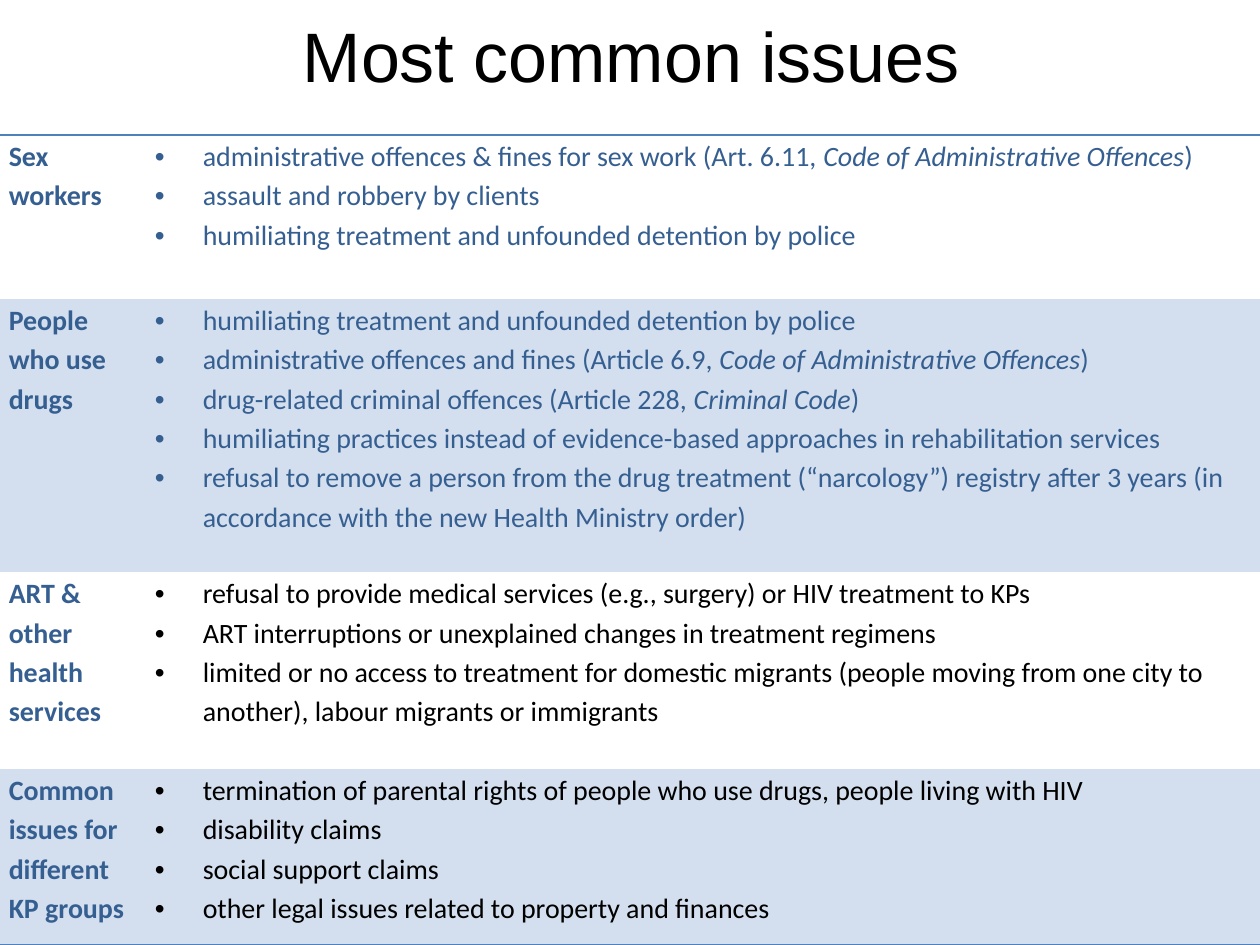
from lxml.etree import SubElement
from pptx import Presentation
from pptx.dml.color import RGBColor
from pptx.enum.text import MSO_ANCHOR, MSO_AUTO_SIZE, PP_ALIGN
from pptx.oxml import parse_xml
from pptx.oxml.ns import nsdecls, qn
from pptx.util import Inches, Pt

COLORS = {"black": "000000", "navy": "365F91", "band": "D3DFEE", "rule": "4F81BD"}
PLAIN_TABLE = "{2D5ABB26-0587-4C30-8999-92F81FD0307C}"
COLUMN_WIDTHS = [1.16, 8.96]

# Each row: height, group, text colour, space after the last issue, issues (*italic*).
ROWS = [
    (1.3, "Sex workers", "navy", 0, [
        "administrative offences & fines for sex work (Art. 6.11, "
        "*Code of Administrative Offences*)",
        "assault and robbery by clients",
        "humiliating treatment and unfounded detention by police",
    ]),
    (2.17, "People who use drugs", "navy", 6, [
        "humiliating treatment and unfounded detention by police",
        "administrative offences and fines (Article 6.9, *Code of Administrative Offences*)",
        "drug-related criminal offences (Article 228, *Criminal Code*)",
        "humiliating practices instead of evidence-based approaches in rehabilitation services",
        "refusal to remove a person from the drug treatment (“narcology”) registry "
        "after 3 years (in accordance with the new Health Ministry order)",
    ]),
    (1.56, "ART & other health services", "black", 0, [
        "refusal to provide medical services (e.g., surgery) or HIV treatment to KPs",
        "ART interruptions or unexplained changes in treatment regimens",
        "limited or no access to treatment for domestic migrants (people moving from "
        "one city to another), labour migrants or immigrants",
    ]),
    (1.4, "Common issues for different KP groups", "black", 0, [
        "termination of parental rights of people who use drugs, people living with HIV",
        "disability claims",
        "social support claims",
        "other legal issues related to property and finances",
    ]),
]


class IssuesSlide:
    def __init__(self, deck):
        self.page = deck.slides.add_slide(deck.slide_layouts[5])
        self.font = "Calibri"
        self.size = 16

    def style(self, span, color, font=None, size=None, bold=False, italic=False):
        span.font.name = font or self.font
        span.font.size = Pt(size or self.size)
        span.font.bold = bold
        span.font.italic = italic
        span.font.color.rgb = RGBColor.from_string(COLORS[color])

    def title(self, text):
        box = self.page.shapes.title
        box.left, box.top = Inches(0.51), Inches(0.21)
        box.width, box.height = Inches(9), Inches(0.45)
        frame = box.text_frame
        frame.text = text
        frame.auto_size = MSO_AUTO_SIZE.NONE
        frame.vertical_anchor = MSO_ANCHOR.MIDDLE
        para = frame.paragraphs[0]
        para.alignment = PP_ALIGN.CENTER
        self.style(para.runs[0], "black", "Arial", 40)

    def bullet(self, para):
        properties = para._p.get_or_add_pPr()
        properties.set("marL", str(Inches(0.38)))
        properties.set("indent", str(Inches(-0.38)))
        SubElement(properties, qn("a:buFont"), typeface="Arial")
        SubElement(properties, qn("a:buChar"), char="•")

    def border(self, cell, side):
        line = parse_xml(
            f'<a:{side} {nsdecls("a")} w="{Pt(1)}"><a:solidFill>'
            f'<a:srgbClr val="{COLORS["rule"]}"/></a:solidFill></a:{side}>'
        )
        cell._tc.get_or_add_tcPr().insert(0, line)

    def cell(self, cell, banded):
        cell.margin_left = cell.margin_right = Inches(0.07)
        cell.margin_top = cell.margin_bottom = 0
        if banded:
            cell.fill.solid()
            cell.fill.fore_color.rgb = RGBColor.from_string(COLORS["band"])
        else:
            cell.fill.background()

    def group(self, cell, text):
        cell.text_frame.text = text
        para = cell.text_frame.paragraphs[0]
        para.line_spacing = 1.15
        para.space_after = Pt(4)
        self.style(para.runs[0], "navy", bold=True)

    def issues(self, cell, items, color, space_after):
        frame = cell.text_frame
        for index, item in enumerate(items):
            para = frame.add_paragraph() if index else frame.paragraphs[0]
            self.bullet(para)
            para.line_spacing = 1.15
            for part, words in enumerate(item.split("*")):
                span = para.add_run()
                span.text = words
                self.style(span, color, italic=part % 2 == 1)
        para.space_after = Pt(space_after)

    def table(self, rows):
        frame = self.page.shapes.add_table(
            len(rows), len(COLUMN_WIDTHS), Inches(0), Inches(1.07),
            Inches(sum(COLUMN_WIDTHS)), Inches(sum(row[0] for row in rows)),
        )
        table = frame.table
        table.first_row = table.horz_banding = False
        table._tbl.tblPr.find(qn("a:tableStyleId")).text = PLAIN_TABLE
        for column, width in zip(table.columns, COLUMN_WIDTHS):
            column.width = Inches(width)
        for index, (height, group, color, space_after, items) in enumerate(rows):
            table.rows[index].height = Inches(height)
            cells = table.rows[index].cells
            for cell in cells:
                self.cell(cell, banded=index % 2 == 1)
                if index == 0:
                    self.border(cell, "lnT")
                if index == len(rows) - 1:
                    self.border(cell, "lnB")
            self.group(cells[0], group)
            self.issues(cells[1], items, color, space_after)


def main():
    deck = Presentation()
    deck.slide_width, deck.slide_height = Inches(10), Inches(7.5)
    slide = IssuesSlide(deck)
    slide.title("Most common issues")
    slide.table(ROWS)
    deck.save("out.pptx")


if __name__ == "__main__":
    main()
